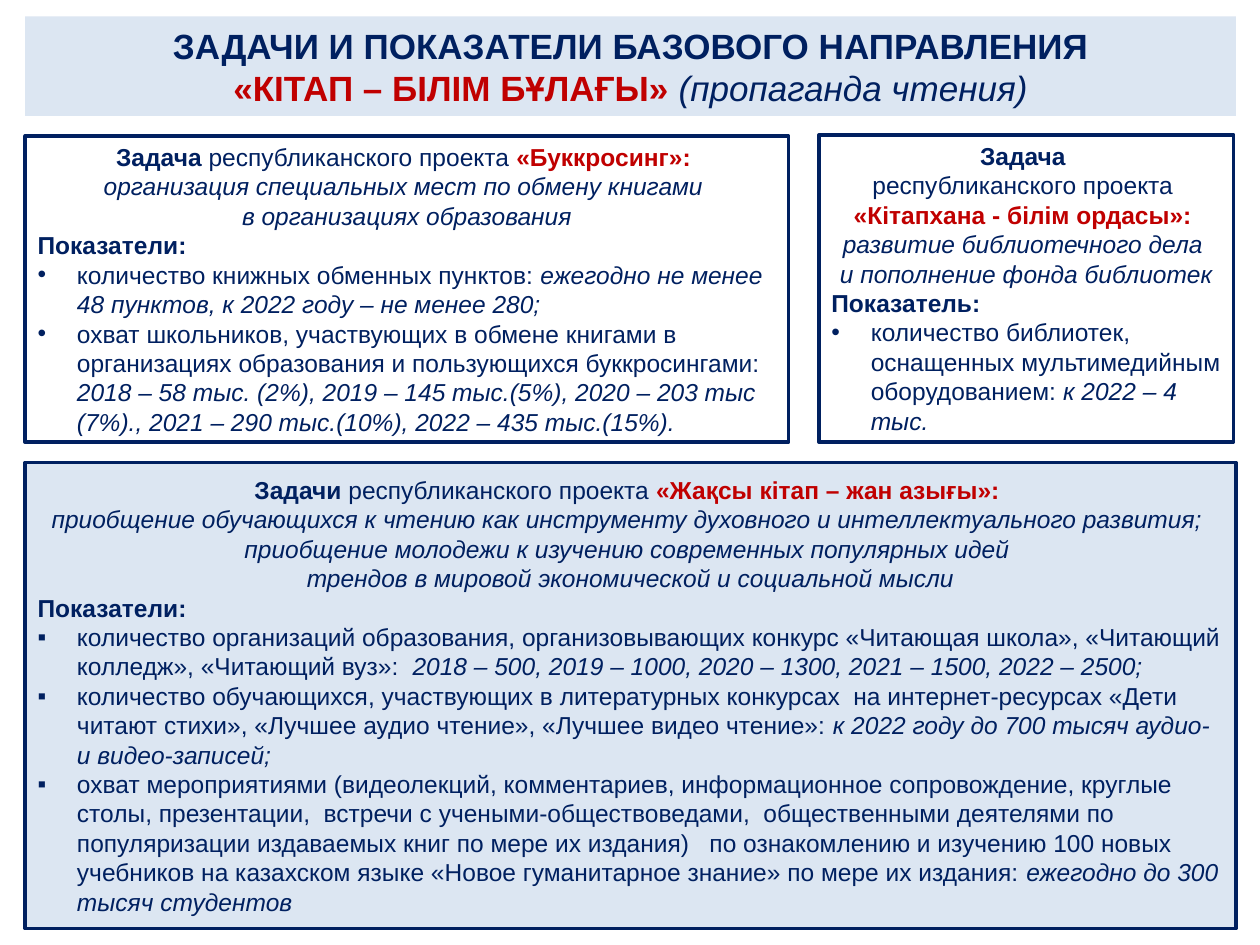
from lxml import etree
from pptx import Presentation
from pptx import util as u
from pptx.dml.color import RGBColor
from pptx.enum import shapes, text
from pptx.oxml import ns

NAVY = RGBColor(0x00, 0x20, 0x60)
RED = RGBColor(0xC0, 0x00, 0x00)
PALE_BLUE = RGBColor(0xDC, 0xE6, 0xF2)

COLUMNS, ROWS = 100, 75
CELL = u.Inches(0.1)
BULLET_INDENT = u.Pt(22.5)

PLAIN = {}
BOLD = {"bold": True}
ITALIC = {"italic": True}
NAME = {"bold": True, "color": RED}


def add_text(paragraph, content, size=14, bold=False, italic=False, color=NAVY):
    run = paragraph.add_run()
    run.text = content
    font = run.font
    font.name = "Arial"
    font.size = u.Pt(size)
    font.bold = bold
    font.italic = italic
    font.color.rgb = color


def set_bullet(paragraph, mark):
    properties = paragraph._p.get_or_add_pPr()
    properties.set("marL", str(BULLET_INDENT))
    properties.set("indent", str(-BULLET_INDENT))
    etree.SubElement(properties, ns.qn("a:buFont")).set("typeface", "Arial")
    etree.SubElement(properties, ns.qn("a:buChar")).set("char", mark)


def add_box(slide, column, row, columns, rows, fill=None, outline=True,
            anchor=text.MSO_ANCHOR.MIDDLE):
    """Draw a rectangle placed in grid cells and return its text frame."""
    shape = slide.shapes.add_shape(
        shapes.MSO_SHAPE.RECTANGLE,
        *(round(cells * CELL) for cells in (column, row, columns, rows)))
    shape.shadow.inherit = False
    if fill is None:
        shape.fill.background()
    else:
        shape.fill.solid()
        shape.fill.fore_color.rgb = fill
    if outline:
        shape.line.color.rgb = NAVY
        shape.line.width = u.Pt(2)
    else:
        shape.line.fill.background()
    frame = shape.text_frame
    frame.word_wrap = True
    frame.vertical_anchor = anchor
    return frame


def add_paragraph(frame, runs, centered=False, bullet=None, size=14):
    """Fill the first paragraph if it is still empty, else add another."""
    first = frame.paragraphs[0]
    paragraph = frame.add_paragraph() if first.runs else first
    paragraph.alignment = text.PP_ALIGN.CENTER if centered else text.PP_ALIGN.LEFT
    if bullet:
        set_bullet(paragraph, bullet)
    for content, style in runs:
        add_text(paragraph, content, size=size, **style)


def add_project(frame, heading, goals, label, indicators, mark="•"):
    """Write centred heading and goals, then a label with bulleted indicators."""
    for runs in heading:
        add_paragraph(frame, runs, centered=True)
    for goal in goals:
        add_paragraph(frame, [(goal, ITALIC)], centered=True)
    add_paragraph(frame, [(label, BOLD)])
    for indicator, target in indicators:
        add_paragraph(frame, [(indicator, PLAIN), (target, ITALIC)], bullet=mark)


def add_title(slide):
    frame = add_box(slide, 2, 1.3, 96.1, 7.9, fill=PALE_BLUE, outline=False)
    lines = [
        [("ЗАДАЧИ И ПОКАЗАТЕЛИ БАЗОВОГО НАПРАВЛЕНИЯ", BOLD)],
        [("«КІТАП – БІЛІМ БҰЛАҒЫ» ", NAME), ("(пропаганда чтения)", ITALIC)],
    ]
    for runs in lines:
        add_paragraph(frame, runs, centered=True, size=20)


def add_bookcrossing(slide):
    add_project(
        add_box(slide, 2, 10.8, 60.6, 24.3),
        [[("Задача ", BOLD), ("республиканского проекта ", PLAIN),
          ("«Буккросинг»: ", NAME)]],
        ["организация специальных мест по обмену книгами ",
         "в организациях образования"],
        "Показатели:",
        [("количество книжных обменных пунктов: ",
          "ежегодно не менее 48 пунктов, к 2022 году – не менее 280;"),
         ("охват школьников, участвующих в обмене книгами в организациях "
          "образования и пользующихся буккросингами: ",
          "2018 – 58 тыс. (2%), 2019 – 145 тыс.(5%), 2020 – 203 тыс (7%)., "
          "2021 – 290 тыс.(10%), 2022 – 435 тыс.(15%).")])


def add_good_book(slide):
    add_project(
        add_box(slide, 2, 36.7, 96.1, 37, fill=PALE_BLUE),
        [[("Задачи ", BOLD), ("республиканского проекта ", PLAIN),
          ("«Жақсы кітап – жан азығы»: ", NAME)]],
        ["приобщение обучающихся к чтению как инструменту духовного и "
         "интеллектуального развития; ",
         "приобщение молодежи к изучению современных популярных идей ",
         "трендов в мировой экономической и социальной мысли"],
        "Показатели:",
        [("количество организаций образования, организовывающих конкурс "
          "«Читающая школа», «Читающий колледж», «Читающий вуз»:  ",
          "2018 – 500, 2019 – 1000, 2020 – 1300, 2021 – 1500, 2022 – 2500;"),
         ("количество обучающихся, участвующих в литературных конкурсах  на "
          "интернет-ресурсах «Дети читают стихи», «Лучшее аудио чтение», "
          "«Лучшее видео чтение»: ",
          "к 2022 году до 700 тысяч аудио-и видео-записей;"),
         ("охват мероприятиями (видеолекций, комментариев, информационное "
          "сопровождение, круглые столы, презентации,  встречи с "
          "учеными-обществоведами,  общественными деятелями по популяризации "
          "издаваемых книг по мере их издания)   по ознакомлению и изучению "
          "100 новых учебников на казахском языке «Новое гуманитарное знание» "
          "по мере их издания: ",
          "ежегодно до 300 тысяч студентов")],
        mark="▪")


def add_library(slide):
    add_project(
        add_box(slide, 65, 10.7, 32.9, 24.4, anchor=text.MSO_ANCHOR.TOP),
        [[("Задача ", BOLD)],
         [("республиканского проекта ", PLAIN)],
         [("«Кітапхана - білім ордасы»: ", NAME)]],
        ["развитие библиотечного дела ", "и пополнение фонда библиотек"],
        "Показатель:",
        [("количество библиотек, оснащенных мультимедийным оборудованием: ",
          "к 2022 – 4 тыс.")])


def main():
    presentation = Presentation()
    presentation.slide_width = COLUMNS * CELL
    presentation.slide_height = ROWS * CELL
    slide = presentation.slides.add_slide(presentation.slide_layouts[6])
    add_title(slide)
    add_bookcrossing(slide)
    add_good_book(slide)
    add_library(slide)
    presentation.save("out.pptx")


if __name__ == "__main__":
    main()
